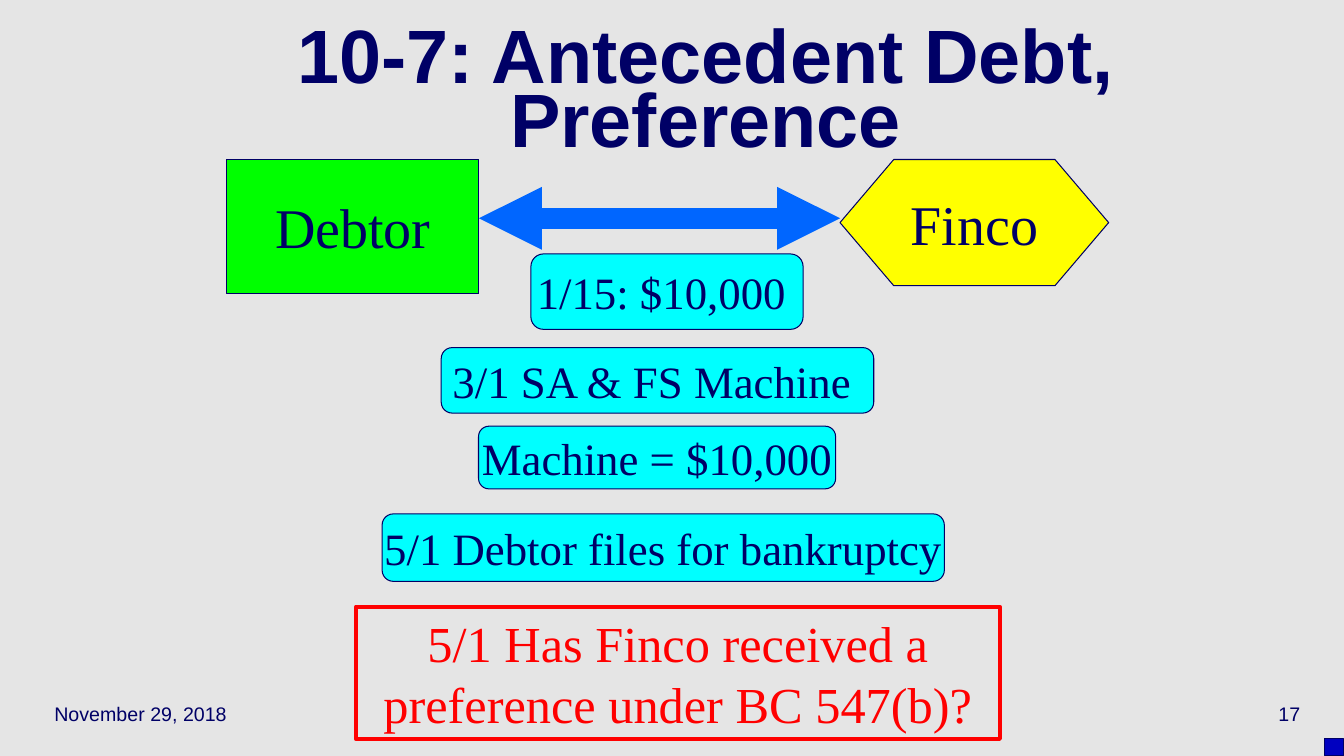
import pptx
import pptx.util
import pptx.dml.color
import pptx.enum.shapes
import pptx.enum.text
import pptx.oxml

Cm, Pt = pptx.util.Cm, pptx.util.Pt
KIND = pptx.enum.shapes.MSO_SHAPE
ALIGN = pptx.enum.text.PP_ALIGN
MIDDLE = pptx.enum.text.MSO_ANCHOR.MIDDLE
FIXED = pptx.enum.text.MSO_AUTO_SIZE.NONE
NS = "http://schemas.openxmlformats.org/drawingml/2006/main"

NAVY, BLUE, RED = "000066", "0066FF", "FF0000"
SANS, SERIF = "Arial", "Times New Roman"

# Boxes are left, top, width, height in centimetres
TITLE = ("10-7: Antecedent Debt, Preference", (2.26, 0.84, 31.04, 3.18))
NOTES = [
    ("November 29, 2018", (1.12, 17.35, 7.06, 1.27), ALIGN.LEFT),
    ("17", (25.96, 17.35, 7.06, 1.27), ALIGN.RIGHT),
]
PARTIES = [
    ("Debtor", KIND.FLOWCHART_PROCESS, "00FF00", (5.72, 4.02, 6.35, 3.38)),
    ("Finco", KIND.FLOWCHART_PREPARATION, "FFFF00", (21.17, 4.02, 6.77, 3.18)),
]
EVENTS = [
    ("1/15: $10,000 ", (13.38, 6.4, 6.86, 1.9)),
    ("3/1 SA & FS Machine ", (11.12, 8.76, 10.9, 1.65)),
    ("Machine = $10,000", (12.06, 10.74, 9, 1.58)),
    ("5/1 Debtor files for bankruptcy", (9.63, 12.95, 14.17, 1.7)),
]
QUERY = ("5/1 Has Finco received a preference under BC 547(b)?",
         (8.97, 15.29, 16.23, 3.33))
CORNER = (33.38, 18.62, 0.48, 0.43)
ARROW_TOP = 5.5


def tint(code):
    return pptx.dml.color.RGBColor.from_string(code)


def write(frame, text, font, size, ink=NAVY, align=ALIGN.CENTER, wrap=False):
    frame.auto_size = FIXED
    frame.word_wrap = wrap
    frame.vertical_anchor = MIDDLE
    line = frame.paragraphs[0]
    line.alignment = align
    run = line.add_run()
    run.text = text
    run.font.name, run.font.size = font, Pt(size)
    run.font.color.rgb = tint(ink)
    return line, run


def draw(slide, kind, box, fill=None, edge=NAVY, width=0.75):
    shape = slide.shapes.add_shape(kind, *map(Cm, box))
    shape.shadow.inherit = False
    if fill:
        shape.fill.solid()
        shape.fill.fore_color.rgb = tint(fill)
    else:
        shape.fill.background()
    shape.line.color.rgb = tint(edge)
    shape.line.width = Pt(width)
    return shape


def join(slide, start, end, top):
    """Draw a two-headed arrow from the right of start to the left of end."""
    link = slide.shapes.add_connector(
        pptx.enum.shapes.MSO_CONNECTOR.STRAIGHT,
        start.left + start.width, Cm(top), end.left, Cm(top))
    link.line.color.rgb = tint(BLUE)
    link.line.width = Pt(15)
    stroke = link.line._get_or_add_ln()
    for tip in ("headEnd", "tailEnd"):
        stroke.append(pptx.oxml.parse_xml(f'<a:{tip} xmlns:a="{NS}" type="triangle"/>'))
    link._element.spPr.append(pptx.oxml.parse_xml(f'<a:effectLst xmlns:a="{NS}"/>'))


def main():
    deck = pptx.Presentation()
    deck.slide_width, deck.slide_height = Cm(33.87), Cm(19.05)
    slide = deck.slides.add_slide(deck.slide_layouts[5])
    slide.background.fill.solid()
    slide.background.fill.fore_color.rgb = tint("E5E5E5")

    text, box = TITLE
    title = slide.shapes.title
    title.left, title.top, title.width, title.height = map(Cm, box)
    line, run = write(title.text_frame, text, SANS, 54, wrap=True)
    line.line_spacing = 0.7
    run.font.bold = True

    for text, box, align in NOTES:
        note = slide.shapes.add_textbox(*map(Cm, box))
        write(note.text_frame, text, SANS, 14, align=align, wrap=True)

    ends = []
    for text, kind, fill, box in PARTIES:
        party = draw(slide, kind, box, fill)
        write(party.text_frame, text, SERIF, 40)
        ends.append(party)
    join(slide, *ends, ARROW_TOP)

    for text, box in EVENTS:
        event = draw(slide, KIND.FLOWCHART_ALTERNATE_PROCESS, box, "00FFFF")
        write(event.text_frame, text, SERIF, 32)

    text, box = QUERY
    query = draw(slide, KIND.RECTANGLE, box, edge=RED, width=3)
    write(query.text_frame, text, SERIF, 36, RED, wrap=True)

    draw(slide, KIND.RECTANGLE, CORNER, "0000C0")
    deck.save("out.pptx")


if __name__ == "__main__":
    main()
